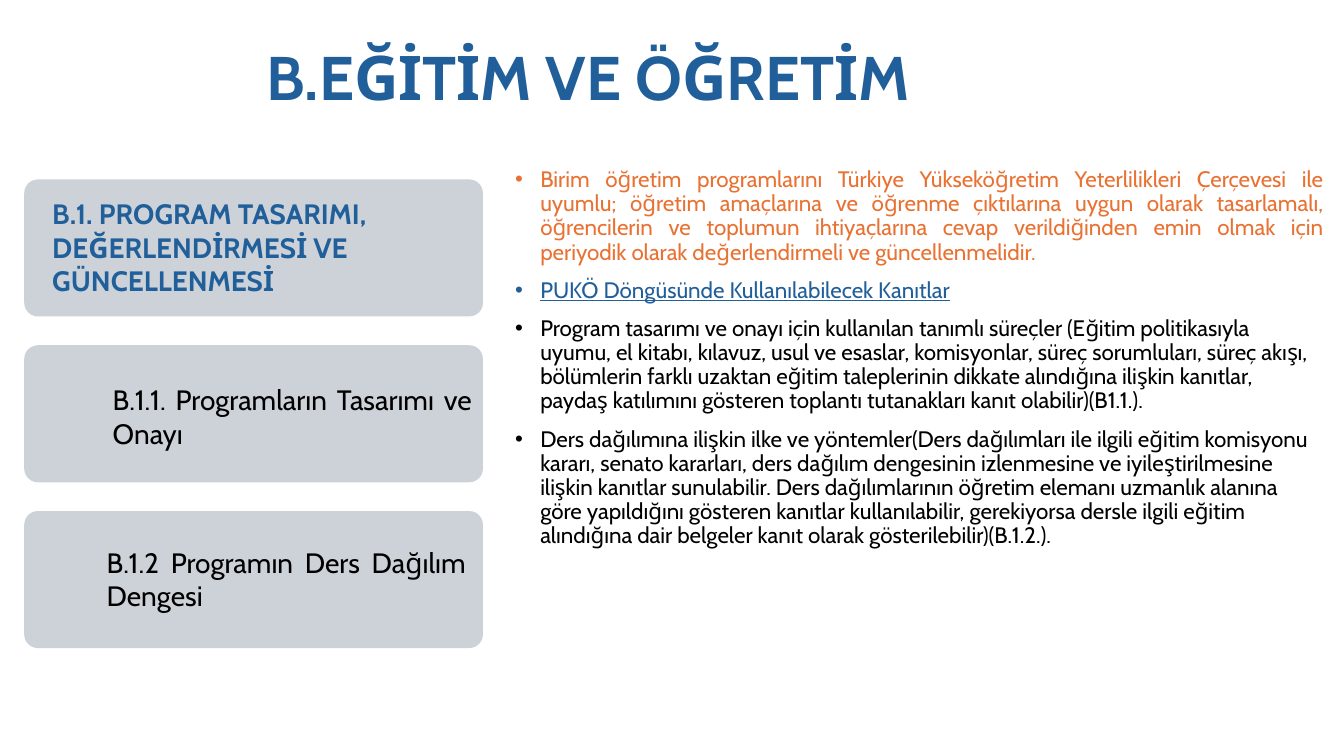
"""Builds the education and teaching slide with three topic cards and an evidence list."""
from lxml import etree
from pptx import Presentation
from pptx.dml.color import RGBColor
from pptx.enum.shapes import MSO_SHAPE
from pptx.enum.text import MSO_ANCHOR, PP_ALIGN
from pptx.oxml.ns import qn
from pptx.util import Inches, Pt

LEFT, JUSTIFY = PP_ALIGN.LEFT, PP_ALIGN.JUSTIFY
TOP, MIDDLE = MSO_ANCHOR.TOP, MSO_ANCHOR.MIDDLE
ROUNDED = MSO_SHAPE.ROUNDED_RECTANGLE
FONT = "Cabin"
COLORS = {"blue": "215F9A", "orange": "E97132", "black": "000000", "card": "CCD2D8"}

TITLE = "B.EĞİTİM VE ÖĞRETİM"
CARDS = [
    ("B.1. PROGRAM TASARIMI, DEĞERLENDİRMESİ VE GÜNCELLENMESİ",
     (0.42, 1.9, 4.24, 1.11), "blue", True, LEFT),
    ("B.1.1. Programların Tasarımı ve Onayı",
     (1.02, 3.75, 3.76, 0.77), "black", False, JUSTIFY),
    ("B.1.2 Programın Ders Dağılım Dengesi",
     (0.96, 5.36, 3.76, 0.77), "black", False, JUSTIFY),
]
BULLETS = [
    ("Birim öğretim programlarını Türkiye Yükseköğretim Yeterlilikleri Çerçevesi ile "
     "uyumlu; öğretim amaçlarına ve öğrenme çıktılarına uygun olarak tasarlamalı, "
     "öğrencilerin ve toplumun ihtiyaçlarına cevap verildiğinden emin olmak için "
     "periyodik olarak değerlendirmeli ve güncellenmelidir.", "orange", False, JUSTIFY),
    ("PUKÖ Döngüsünde Kullanılabilecek Kanıtlar", "blue", True, JUSTIFY),
    ("Program tasarımı ve onayı için kullanılan tanımlı süreçler (Eğitim politikasıyla "
     "uyumu, el kitabı, kılavuz, usul ve esaslar, komisyonlar, süreç sorumluları, süreç "
     "akışı, bölümlerin farklı uzaktan eğitim taleplerinin dikkate alındığına ilişkin "
     "kanıtlar, paydaş katılımını gösteren toplantı tutanakları kanıt olabilir)(B1.1.).",
     "black", False, LEFT),
    ("Ders dağılımına ilişkin ilke ve yöntemler(Ders dağılımları ile ilgili eğitim "
     "komisyonu kararı, senato kararları, ders dağılım dengesinin izlenmesine ve "
     "iyileştirilmesine ilişkin kanıtlar sunulabilir. Ders dağılımlarının öğretim elemanı "
     "uzmanlık alanına göre yapıldığını gösteren kanıtlar kullanılabilir, gerekiyorsa "
     "dersle ilgili eğitim alındığına dair belgeler kanıt olarak gösterilebilir)(B.1.2.).",
     "black", False, LEFT),
]
TITLE_BOX = (2.54, 0.07, 11.5, 1.45)
BODY_BOX = (5.01, 1.62, 8.22, 5.72)
CARD_X, CARD_Y, CARD_W, CARD_H, CARD_STEP = 0.24, 1.78, 4.55, 1.36, 1.645


def rgb(name):
    return RGBColor.from_string(COLORS[name])


def add_run(p, text, size, color, bold=False, underline=False):
    r = p.add_run()
    r.text = text
    f = r.font
    f.name, f.size, f.bold, f.underline = FONT, Pt(size), bold, underline
    f.color.rgb = rgb(color)


def add_text_box(s, box):
    tf = s.shapes.add_textbox(*map(Inches, box)).text_frame
    tf.word_wrap = True
    tf.vertical_anchor = TOP
    return tf


def add_bullet(p):
    pPr = p._p.get_or_add_pPr()
    pPr.set("marL", str(Inches(0.25)))
    pPr.set("indent", str(-Inches(0.25)))
    etree.SubElement(pPr, qn("a:buFont")).set("typeface", "Arial")
    etree.SubElement(pPr, qn("a:buChar")).set("char", "•")


def add_title(s):
    sp = s.shapes.title
    sp.left, sp.top, sp.width, sp.height = map(Inches, TITLE_BOX)
    tf = sp.text_frame
    tf.word_wrap = True
    tf.vertical_anchor = MIDDLE
    p = tf.paragraphs[0]
    p.alignment, p.line_spacing = LEFT, 0.9
    add_run(p, TITLE, 44, "blue", bold=True)


def add_evidence(s):
    tf = add_text_box(s, BODY_BOX)
    for i, (text, color, underline, align) in enumerate(BULLETS):
        p = tf.add_paragraph() if i else tf.paragraphs[0]
        p.alignment, p.line_spacing, p.space_before = align, 0.9, Pt(10)
        add_bullet(p)
        add_run(p, text, 16, color, underline=underline)


def add_cards(s):
    for i, (text, box, color, bold, align) in enumerate(CARDS):
        place = (CARD_X, CARD_Y + i * CARD_STEP, CARD_W, CARD_H)
        sp = s.shapes.add_shape(ROUNDED, *map(Inches, place))
        sp.adjustments[0] = 0.1
        sp.shadow.inherit = False
        sp.fill.solid()
        sp.fill.fore_color.rgb = rgb("card")
        sp.line.fill.background()
        p = add_text_box(s, box).paragraphs[0]
        p.alignment = align
        add_run(p, text, 20, color, bold)


def main():
    prs = Presentation()
    prs.slide_width, prs.slide_height = Inches(13.33), Inches(7.5)
    s = prs.slides.add_slide(prs.slide_layouts[5])
    add_title(s)
    add_evidence(s)
    add_cards(s)
    prs.save("out.pptx")


if __name__ == "__main__":
    main()
